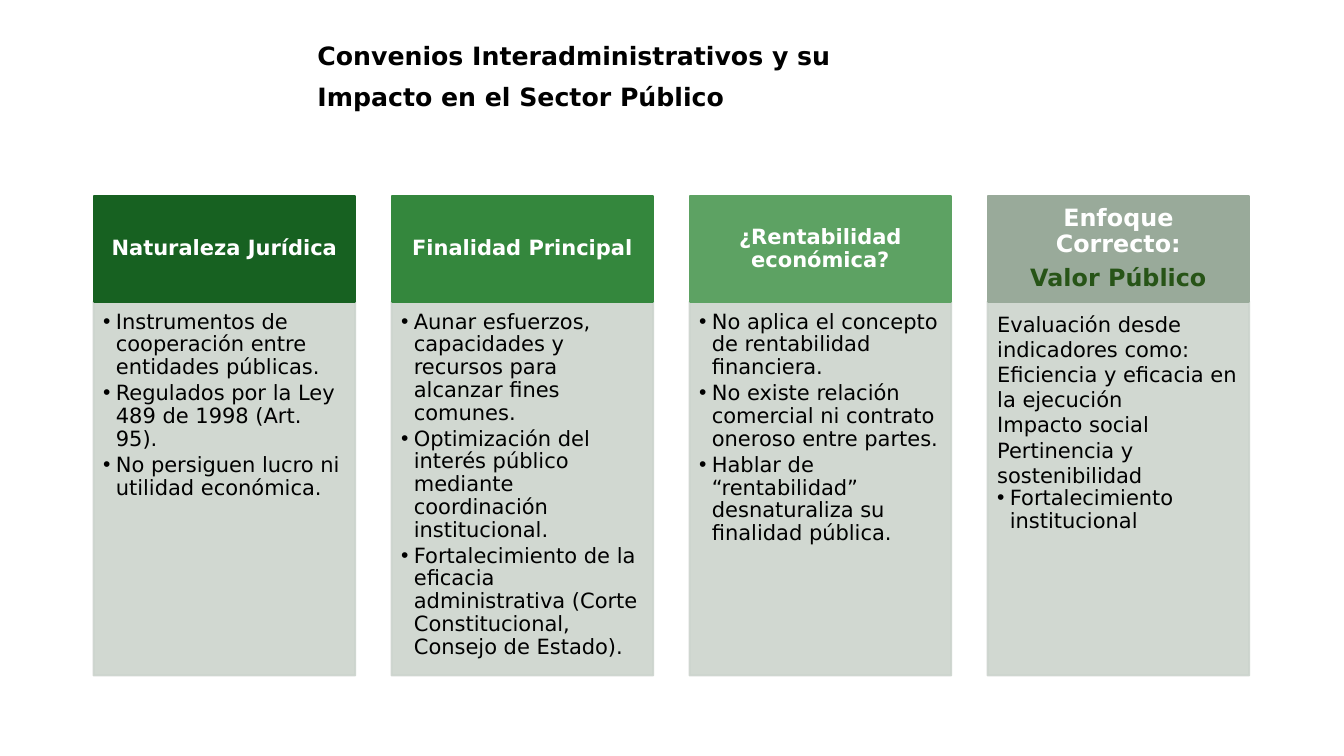
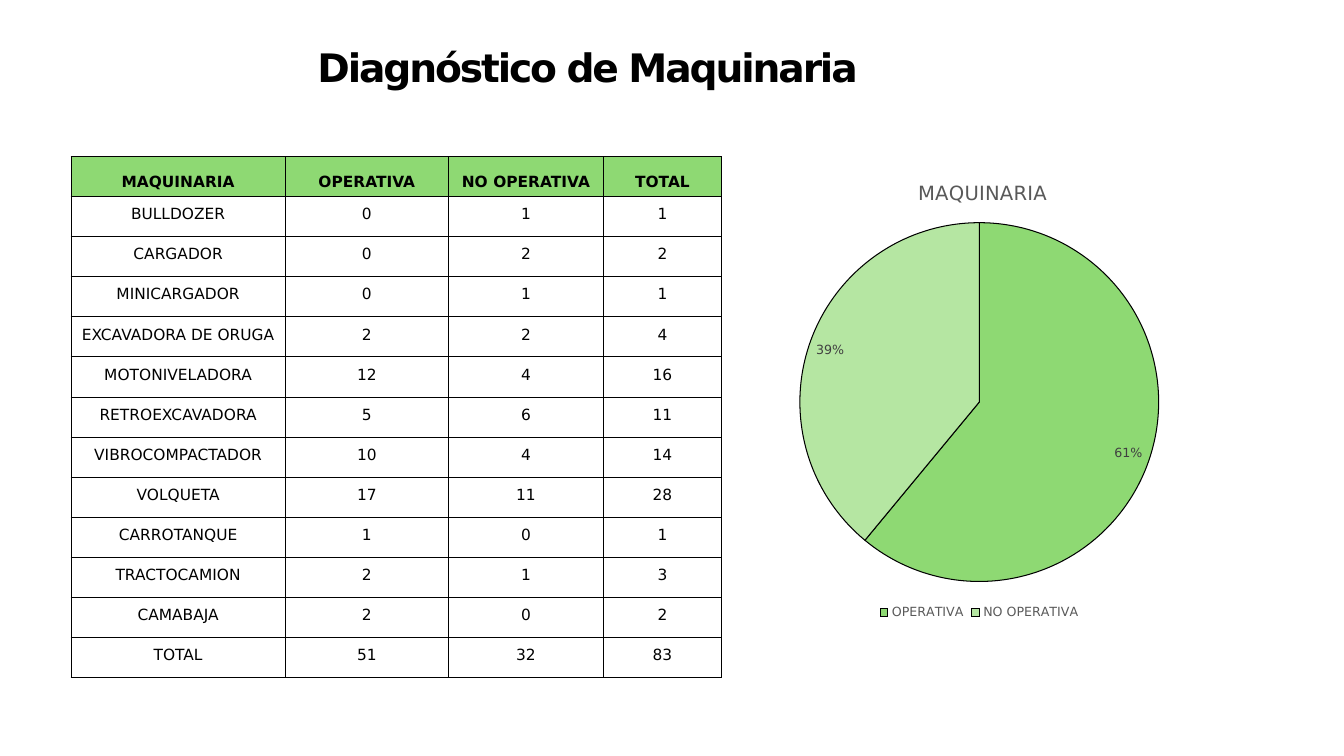
from dataclasses import dataclass

from lxml.etree import Element, SubElement
from pptx import Presentation
from pptx.chart.data import CategoryChartData
from pptx.dml.color import RGBColor
from pptx.enum.chart import XL_CHART_TYPE as ChartType
from pptx.enum.chart import XL_LABEL_POSITION as LabelPosition
from pptx.enum.chart import XL_LEGEND_POSITION as LegendPosition
from pptx.enum.shapes import MSO_SHAPE as ShapeKind
from pptx.enum.text import MSO_ANCHOR as Anchor
from pptx.enum.text import MSO_AUTO_SIZE as AutoSize
from pptx.enum.text import PP_ALIGN as Align
from pptx.oxml.ns import qn
from pptx.util import Cm, Pt


@dataclass(frozen=True)
class Theme:
    font: str = "DejaVu Sans"
    black: str = "000000"
    white: str = "FFFFFF"
    panel: str = "CCD4CD"
    accent: str = "275417"
    green: str = "8ED973"
    light_green: str = "B5E6A2"
    chart_text: str = "595959"
    label_text: str = "404040"
    headings: tuple = ("176121", "34873D", "5DA263", "99AA9A")
    title: float = 18
    big_title: float = 28
    heading: float = 15
    big_heading: float = 17
    body: float = 15
    cell: float = 11
    chart_title: float = 14
    chart_small: float = 9


THEME = Theme()

# Content
COLUMNS = [
    (["Naturaleza Jurídica"], [
        "Instrumentos de cooperación entre entidades públicas.",
        "Regulados por la Ley 489 de 1998 (Art. 95).",
        "No persiguen lucro ni utilidad económica."]),
    (["Finalidad Principal"], [
        "Aunar esfuerzos, capacidades y recursos para alcanzar fines comunes.",
        "Optimización del interés público mediante coordinación institucional.",
        "Fortalecimiento de la eficacia administrativa (Corte Constitucional, "
        "Consejo de Estado)."]),
    (["¿Rentabilidad económica?"], [
        "No aplica el concepto de rentabilidad financiera.",
        "No existe relación comercial ni contrato oneroso entre partes.",
        "Hablar de “rentabilidad” desnaturaliza su finalidad pública."]),
    (["Enfoque Correcto:", "Valor Público"], [
        "Evaluación desde indicadores como:",
        "Eficiencia y eficacia en la ejecución",
        "Impacto social",
        "Pertinencia y sostenibilidad",
        "Fortalecimiento institucional"]),
]
HEADER = ["MAQUINARIA", "OPERATIVA", "NO OPERATIVA", "TOTAL"]
MACHINES = [
    ("BULLDOZER", 0, 1), ("CARGADOR", 0, 2), ("MINICARGADOR", 0, 1),
    ("EXCAVADORA DE ORUGA", 2, 2), ("MOTONIVELADORA", 12, 4),
    ("RETROEXCAVADORA", 5, 6), ("VIBROCOMPACTADOR", 10, 4),
    ("VOLQUETA", 17, 11), ("CARROTANQUE", 1, 0), ("TRACTOCAMION", 2, 1),
    ("CAMABAJA", 2, 0),
]


class Deck:
    def __init__(self, theme):
        self.theme = theme
        self.presentation = Presentation()
        self.presentation.slide_width = Cm(33.87)
        self.presentation.slide_height = Cm(19.05)
        self.slide = None

    # Shared helpers
    def new_slide(self, layout_name):
        layout = self.presentation.slide_layouts.get_by_name(layout_name)
        self.slide = self.presentation.slides.add_slide(layout)

    def style(self, font, size, color, bold=False):
        font.name = self.theme.font
        font.size = Pt(size)
        font.bold = bold
        font.color.rgb = RGBColor.from_string(color)

    def add_text(self, paragraph, text, size, color, bold=False):
        run = paragraph.add_run()
        run.text = text
        self.style(run.font, size, color, bold)
        return run

    @staticmethod
    def place(shape, left, top, width, height):
        shape.left, shape.top = Cm(left), Cm(top)
        shape.width, shape.height = Cm(width), Cm(height)

    @staticmethod
    def paint(shape, color, line_width, opacity=100):
        shape.fill.solid()
        shape.fill.fore_color.rgb = RGBColor.from_string(color)
        shape.line.color.rgb = RGBColor.from_string(color)
        shape.line.width = Pt(line_width)
        if opacity < 100:
            for node in shape.element.spPr.iter(qn("a:srgbClr")):
                SubElement(node, qn("a:alpha"), val=str(opacity * 1000))

    @staticmethod
    def frame(shape, anchor, left, top, right, bottom):
        text_frame = shape.text_frame
        text_frame.word_wrap = True
        text_frame.auto_size = AutoSize.NONE
        text_frame.vertical_anchor = anchor
        text_frame.margin_left, text_frame.margin_right = Cm(left), Cm(right)
        text_frame.margin_top, text_frame.margin_bottom = Cm(top), Cm(bottom)
        return text_frame

    @staticmethod
    def paragraphs(text_frame, texts, gap, alignment, spacing=0.9):
        for index, text in enumerate(texts):
            paragraph = (text_frame.add_paragraph() if index
                         else text_frame.paragraphs[0])
            paragraph.alignment = alignment
            paragraph.line_spacing = spacing
            paragraph.space_before = Pt(gap if index else 0)
            paragraph.space_after = Pt(0)
            yield index, paragraph, text

    @staticmethod
    def bullet(paragraph, shown):
        properties = paragraph._p.get_or_add_pPr()
        indent = Cm(0.32) if shown else 0
        properties.set("marL", str(indent))
        properties.set("indent", str(-indent))
        if shown:
            SubElement(properties, qn("a:buFont"), typeface="Arial")
            SubElement(properties, qn("a:buChar"), char="•")
        else:
            SubElement(properties, qn("a:buNone"))

    # Elements
    def title(self, lines, size, height, tracking=0):
        shape = self.slide.shapes.title
        self.place(shape, 7.75, 0.97, 19.89, height)
        text_frame = self.frame(shape, Anchor.TOP, 0.25, 0.13, 0.25, 0.13)
        spacing = 0.9 if len(lines) > 1 else 1.0
        for _, paragraph, text in self.paragraphs(
                text_frame, lines, 10, Align.LEFT, spacing):
            run = self.add_text(paragraph, text, size, self.theme.black, True)
            if tracking:
                run.font._element.set("spc", str(int(tracking * 100)))

    def heading(self, lines, color, left, top, width, height):
        shape = self.slide.shapes.add_shape(
            ShapeKind.RECTANGLE, Cm(left), Cm(top), Cm(width), Cm(height))
        shape.shadow.inherit = False
        self.paint(shape, color, 1.5)
        text_frame = self.frame(shape, Anchor.MIDDLE, 0.3, 0.18, 0.3, 0.18)
        size = self.theme.big_heading if len(lines) > 1 else self.theme.heading
        for index, paragraph, text in self.paragraphs(
                text_frame, lines, 6, Align.CENTER):
            text_color = self.theme.accent if index else self.theme.white
            self.add_text(paragraph, text, size, text_color, True)

    def panel(self, placeholder, items, plain_count, *box):
        """Fill a list panel whose first plain_count items have no bullet."""
        self.place(placeholder, *box)
        self.paint(placeholder, self.theme.panel, 1.5, 90)
        text_frame = self.frame(placeholder, Anchor.TOP, 0.24, 0.24, 0.3, 0.32)
        gap = 0 if plain_count else 2.5
        for index, paragraph, text in self.paragraphs(
                text_frame, items, gap, Align.LEFT):
            bulleted = index >= plain_count
            if not bulleted:
                paragraph.line_spacing = 1.0
            self.bullet(paragraph, bulleted)
            self.add_text(paragraph, text, self.theme.body, self.theme.black)

    def cell(self, cell, text, is_header):
        cell.margin_left = cell.margin_right = cell.margin_top = Cm(0.02)
        cell.margin_bottom = Cm(0.12)
        cell.vertical_anchor = Anchor.BOTTOM if is_header else Anchor.MIDDLE
        if is_header:
            cell.fill.solid()
            cell.fill.fore_color.rgb = RGBColor.from_string(self.theme.green)
        else:
            cell.fill.background()
        properties = cell._tc.get_or_add_tcPr()
        for index, side in enumerate(("lnL", "lnR", "lnT", "lnB")):
            border = Element(qn(f"a:{side}"), w=str(Pt(0.5)))
            fill = SubElement(border, qn("a:solidFill"))
            SubElement(fill, qn("a:srgbClr"), val=self.theme.black)
            properties.insert(index, border)
        paragraph = cell.text_frame.paragraphs[0]
        paragraph.alignment = Align.CENTER
        self.add_text(paragraph, str(text), self.theme.cell, self.theme.black,
                      is_header)

    def table(self, rows, left, top, widths, row_height):
        table = self.slide.shapes.add_table(
            len(rows), len(widths), Cm(left), Cm(top),
            Cm(sum(widths)), Cm(row_height * len(rows))).table
        table.first_row = table.horz_banding = False
        for column, width in zip(table.columns, widths):
            column.width = Cm(width)
        for row_index, values in enumerate(rows):
            table.rows[row_index].height = Cm(row_height)
            for column_index, value in enumerate(values):
                self.cell(table.cell(row_index, column_index), value,
                          row_index == 0)

    @staticmethod
    def chart_layout(parent, index, **position):
        """Set a manual layout, given in fractions of the chart."""
        for old in parent.findall(qn("c:layout")):
            parent.remove(old)
        layout = Element(qn("c:layout"))
        manual = SubElement(layout, qn("c:manualLayout"))
        if "w" in position:
            SubElement(manual, qn("c:layoutTarget"), val="inner")
        for mode in ("xMode", "yMode"):
            SubElement(manual, qn(f"c:{mode}"), val="edge")
        for name, value in position.items():
            SubElement(manual, qn(f"c:{name}"), val=str(value))
        parent.insert(index, layout)

    def pie(self, title, categories, values, left, top, width, height):
        theme = self.theme
        data = CategoryChartData()
        data.categories = categories
        data.add_series(title, values)
        chart = self.slide.shapes.add_chart(
            ChartType.PIE, Cm(left), Cm(top), Cm(width), Cm(height),
            data).chart
        self.style(chart.font, theme.chart_small, theme.chart_text)
        chart.has_title = True
        self.add_text(chart.chart_title.text_frame.paragraphs[0], title,
                      theme.chart_title, theme.chart_text)
        self.chart_layout(chart.chart_title.element, 1, x=0.37, y=0.04)
        plot_area = chart.element.find(".//" + qn("c:plotArea"))
        self.chart_layout(plot_area, 0, x=0.14, y=0.14, w=0.72, h=0.77)

        chart.has_legend = True
        chart.legend.position = LegendPosition.BOTTOM
        chart.legend.include_in_layout = False
        self.style(chart.legend.font, theme.chart_small, theme.chart_text)

        plot = chart.plots[0]
        plot.vary_by_categories = True
        for index, color in enumerate((theme.green, theme.light_green)):
            point = plot.series[0].points[index].format
            point.fill.solid()
            point.fill.fore_color.rgb = RGBColor.from_string(color)
            point.line.color.rgb = RGBColor.from_string(theme.black)
            point.line.width = Pt(0.75)
        plot.has_data_labels = True
        labels = plot.data_labels
        labels.show_percentage, labels.show_value = True, False
        labels.number_format, labels.number_format_is_linked = "0%", False
        labels.position = LabelPosition.INSIDE_END
        self.style(labels.font, theme.chart_small, theme.label_text)


def build_agreements(deck):
    deck.new_slide("Comparison")
    deck.title(["Convenios Interadministrativos y su",
                "Impacto en el Sector Público"], deck.theme.title, 2.01)
    bodies = [shape for shape in deck.slide.placeholders
              if shape.placeholder_format.idx > 0]
    for index, (lines, items) in enumerate(COLUMNS):
        left = 2.36 + index * 7.51
        plain_count = len(items) - 1 if len(lines) > 1 else 0
        deck.panel(bodies[index], items, plain_count, left, 7.6, 6.59, 9.42)
        deck.heading(lines, deck.theme.headings[index], left, 4.95, 6.59, 2.65)


def build_machinery(deck):
    deck.new_slide("Title Only")
    deck.title(["Diagnóstico de Maquinaria"], deck.theme.big_title, 1.45, -1.5)
    rows = [(name, working, idle, working + idle)
            for name, working, idle in MACHINES]
    totals = [sum(column) for column in list(zip(*rows))[1:]]
    deck.pie("MAQUINARIA", HEADER[1:3], (61, 39), 18.4, 3.96, 12.56, 11.76)
    deck.table([HEADER, *rows, ("TOTAL", *totals)], 1.79, 3.94,
               (5.4, 4.11, 3.91, 2.97), 1.01)


def main():
    deck = Deck(THEME)
    build_agreements(deck)
    build_machinery(deck)
    deck.presentation.save("out.pptx")


if __name__ == "__main__":
    main()
